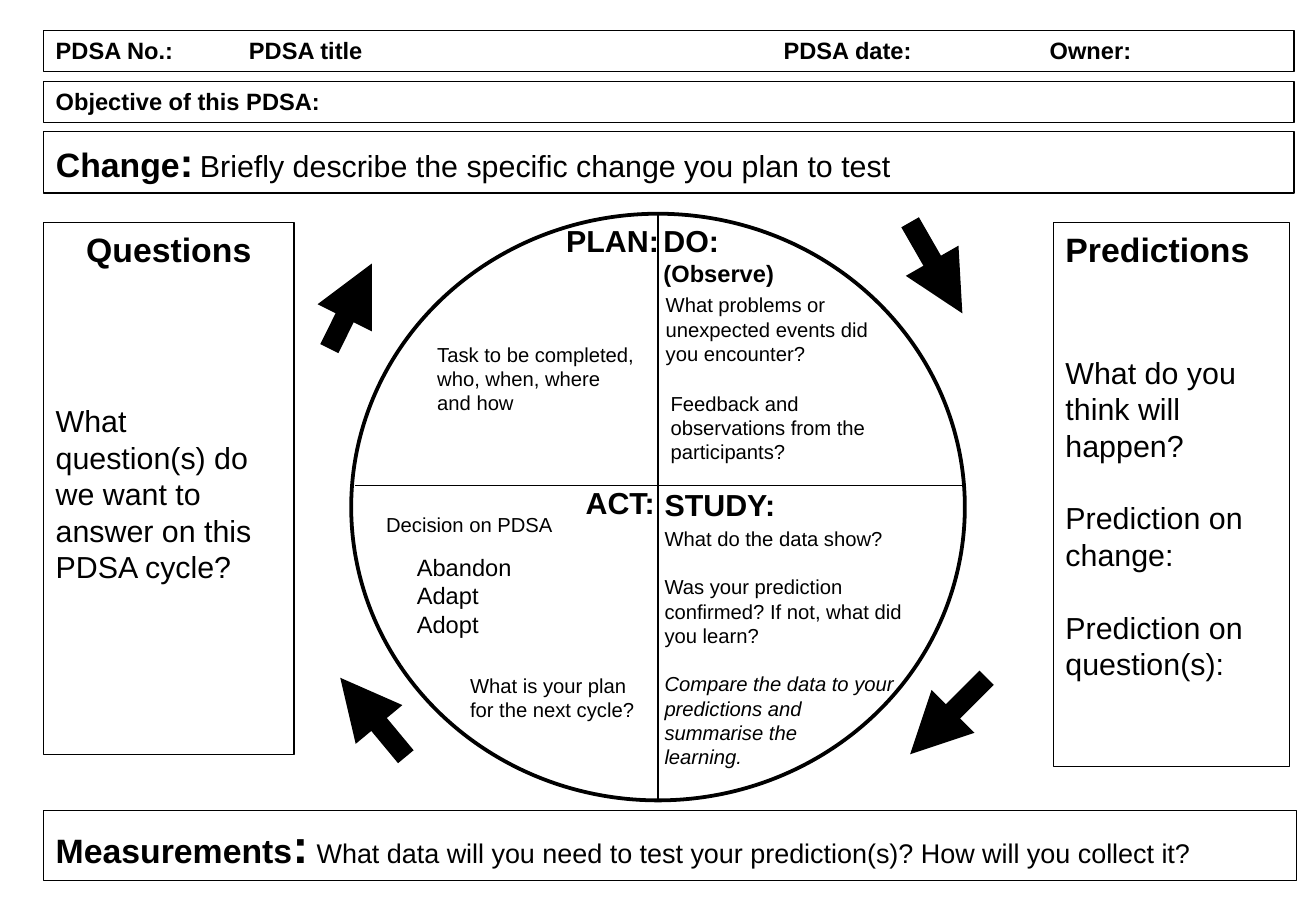
from dataclasses import dataclass
from lxml import etree
from pptx import Presentation, util as u
from pptx.dml.color import RGBColor
from pptx.enum import shapes, text
from pptx.oxml.ns import qn

BLACK = RGBColor(0, 0, 0)
FONT = "Arial"
COLS, ROWS = 108.3, 75  # square grid cells, a tenth of an inch each
W, H = u.Inches(10.83), u.Inches(7.5)
RECT, OVAL = shapes.MSO_SHAPE.RECTANGLE, shapes.MSO_SHAPE.OVAL
TOP, MIDDLE = text.MSO_ANCHOR.TOP, text.MSO_ANCHOR.MIDDLE
LEFT, CENTER = text.PP_ALIGN.LEFT, text.PP_ALIGN.CENTER
LINE = 1.2  # height of a text line, as a share of its size


@dataclass
class Run:
    text: str
    size: float
    bold: bool = False


@dataclass
class Para:
    content: str | list[Run]
    size: float = 12
    bold: bool = False
    italic: bool = False
    gap: float = 0  # points before the paragraph
    align: text.PP_ALIGN = LEFT


@dataclass
class Box:
    col: float
    row: float
    cols: float
    rows: float
    paras: list[Para]
    anchor: text.MSO_ANCHOR = TOP
    wrap: bool = True
    margin: float = 1  # side margin in columns


@dataclass
class Line:
    start: tuple[float, float]
    end: tuple[float, float]


def x(cols: float) -> int:
    return round(W * cols / COLS)


def y(rows: float) -> int:
    return round(H * rows / ROWS)


def place(b: Box) -> tuple[int, int, int, int]:
    return x(b.col), y(b.row), x(b.cols), y(b.rows)


def write(sp, b: Box) -> None:
    tf = sp.text_frame
    tf.auto_size, tf.word_wrap = text.MSO_AUTO_SIZE.NONE, b.wrap
    tf.vertical_anchor = b.anchor
    tf.margin_left = tf.margin_right = x(b.margin)
    tf.margin_top = tf.margin_bottom = y(0.5)
    for i, para in enumerate(b.paras):
        p = tf.add_paragraph() if i else tf.paragraphs[0]
        p.alignment = para.align
        p.space_before = u.Pt(para.gap)
        f = p.font
        f.name, f.color.rgb = FONT, BLACK
        if isinstance(para.content, str):
            p.text = para.content
            f.size, f.bold, f.italic = u.Pt(para.size), para.bold, para.italic
            continue
        for part in para.content:
            r = p.add_run()
            r.text, r.font.size, r.font.bold = part.text, u.Pt(part.size), part.bold


def outline(sp, width: float) -> None:
    sp.fill.background()
    sp.line.color.rgb, sp.line.width = BLACK, u.Pt(width)


def add_panel(s, b: Box, kind=RECT, width: float = 0.75):
    sp = s.shapes.add_shape(kind, *place(b))
    sp.shadow.inherit = False
    outline(sp, width)
    write(sp, b)
    return sp


def add_label(s, b: Box) -> None:
    write(s.shapes.add_textbox(*place(b)), b)


def fill_placeholder(sp, b: Box) -> None:
    sp.left, sp.top, sp.width, sp.height = place(b)
    write(sp, b)
    for p in sp.text_frame.paragraphs:
        pPr = p._p.get_or_add_pPr()
        pPr.set("marL", "0")
        pPr.set("indent", "0")
        pPr.insert_element_before(etree.Element(qn("a:buNone")), "a:tabLst", "a:defRPr")


def add_line(s, line: Line, width: float, arrow: bool = False) -> None:
    (x1, y1), (x2, y2) = line.start, line.end
    cx = s.shapes.add_connector(shapes.MSO_CONNECTOR.STRAIGHT, x(x1), y(y1), x(x2), y(y2))
    cx.line.color.rgb, cx.line.width = BLACK, u.Pt(width)
    if arrow:
        etree.SubElement(cx.line._get_or_add_ln(), qn("a:tailEnd"), type="triangle")
    etree.SubElement(cx._element.spPr, qn("a:effectLst"))


def set_tabs(p, stops: list[float]) -> None:
    tabs = etree.Element(qn("a:tabLst"))
    for stop in stops:
        etree.SubElement(tabs, qn("a:tab"), pos=str(x(stop)), algn="l")
    p._p.get_or_add_pPr().insert_element_before(tabs, "a:defRPr")


CHANGE = Box(3.6, 10.8, 102.9, 5.1, [Para([
    Run("Change", 20, True), Run(":", 24, True), Run(" ", 14, True),
    Run("Briefly describe the specific change you plan to test", 18)])])
DECISIONS = Box(33.3, 45, 11.7, 8, [Para(t, 14) for t in ("Abandon", "Adapt", "Adopt")])
HEADER = Box(3.6, 2.5, 102.9, 3.4, [Para("PDSA No.:\tPDSA title\tPDSA date:\tOwner:", 14, True)])
HEADER_TABS = [15.9, 59.9, 81.8]
CYCLE = Box(28.9, 17.6, 50.5, 48.3, [])

PANELS = [
    Box(3.6, 6.7, 102.9, 3.4, [Para("Objective of this PDSA:", 14, True)]),
    Box(3.6, 18.3, 20.6, 43.8, [
        Para("Questions", 20, True, align=CENTER),
        Para("What question(s) do we want to answer on this PDSA cycle?", 18, gap=66 * LINE)]),
    Box(86.7, 18.3, 19.4, 44.8, [
        Para("Predictions", 20, True),
        Para("What do you think will happen?", 18, gap=42 * LINE),
        Para("Prediction on change:", 18, gap=18 * LINE),
        Para("Prediction on question(s):", 18, gap=18 * LINE)]),
    Box(3.6, 66.7, 103.1, 5.8, [Para([
        Run("Measurements", 20, True), Run(":", 28, True), Run(" ", 18),
        Run("What data will you need to test your prediction(s)? How will you collect it?", 16)])]),
]

LABELS = [
    # quarter headings
    Box(46, 17.8, 10.4, 4, [Para("PLAN:", 18, True)], margin=0.6),
    Box(54, 17.8, 11.2, 6.3, [Para("DO:", 18, True), Para("(Observe)", 14, True)], margin=0.6),
    Box(54.1, 39.5, 11.9, 4, [Para("STUDY:", 18, True)], margin=0.6),
    Box(47.6, 39.4, 8.4, 4, [Para("ACT:", 18, True)], margin=0.6),
    # quarter prompts
    Box(35, 27.6, 18.3, 7.1, [Para("Task to be completed, who, when, where and how")], MIDDLE),
    Box(53.8, 23.6, 20.8, 7,
        [Para("What problems or unexpected events did you encounter?")], MIDDLE),
    Box(54.2, 31.7, 18.8, 7, [Para("Feedback and observations from the participants?")], MIDDLE),
    Box(53.7, 42.7, 22.5, 21.2, [
        Para("What do the data show?"),
        Para("Was your prediction confirmed? If not, what did you learn?", gap=12 * LINE),
        Para("Compare the data to your predictions and", italic=True, gap=12 * LINE),
        Para("summarise the", italic=True),
        Para("learning.", italic=True)], MIDDLE),
    Box(30.8, 41.7, 15.7, 3, [Para("Decision on PDSA")], MIDDLE, wrap=False),
    Box(37.7, 54.9, 15.7, 5, [Para("What is your plan"), Para("for the next cycle?")],
        MIDDLE, wrap=False),
]

DIVIDERS = [Line((54.15, 17.6), (54.15, 65.9)), Line((29.2, 40), (79.2, 40))]
ARROWS = [
    Line((27.1, 28.7), (30.6, 21.7)),
    Line((74.9, 18.3), (79.2, 25.8)),
    Line((81.2, 55.8), (74.9, 62.1)),
    Line((33.4, 62.3), (28, 55.8)),
]


def main() -> None:
    prs = Presentation()
    prs.slide_width, prs.slide_height = W, H
    s = prs.slides.add_slide(prs.slide_layouts[1])

    # Title and list
    fill_placeholder(s.shapes.title, CHANGE)
    outline(s.shapes.title, 0.75)
    fill_placeholder(s.placeholders[1], DECISIONS)

    # Framed panels
    header = add_panel(s, HEADER)
    set_tabs(header.text_frame.paragraphs[0], HEADER_TABS)
    for panel in PANELS:
        add_panel(s, panel)

    # Cycle with its quarters and arrows
    add_panel(s, CYCLE, OVAL, 2.25)
    for divider in DIVIDERS:
        add_line(s, divider, 0.75)
    for arrow in ARROWS:
        add_line(s, arrow, 12, arrow=True)
    for label in LABELS:
        add_label(s, label)

    prs.save("out.pptx")


if __name__ == "__main__":
    main()
